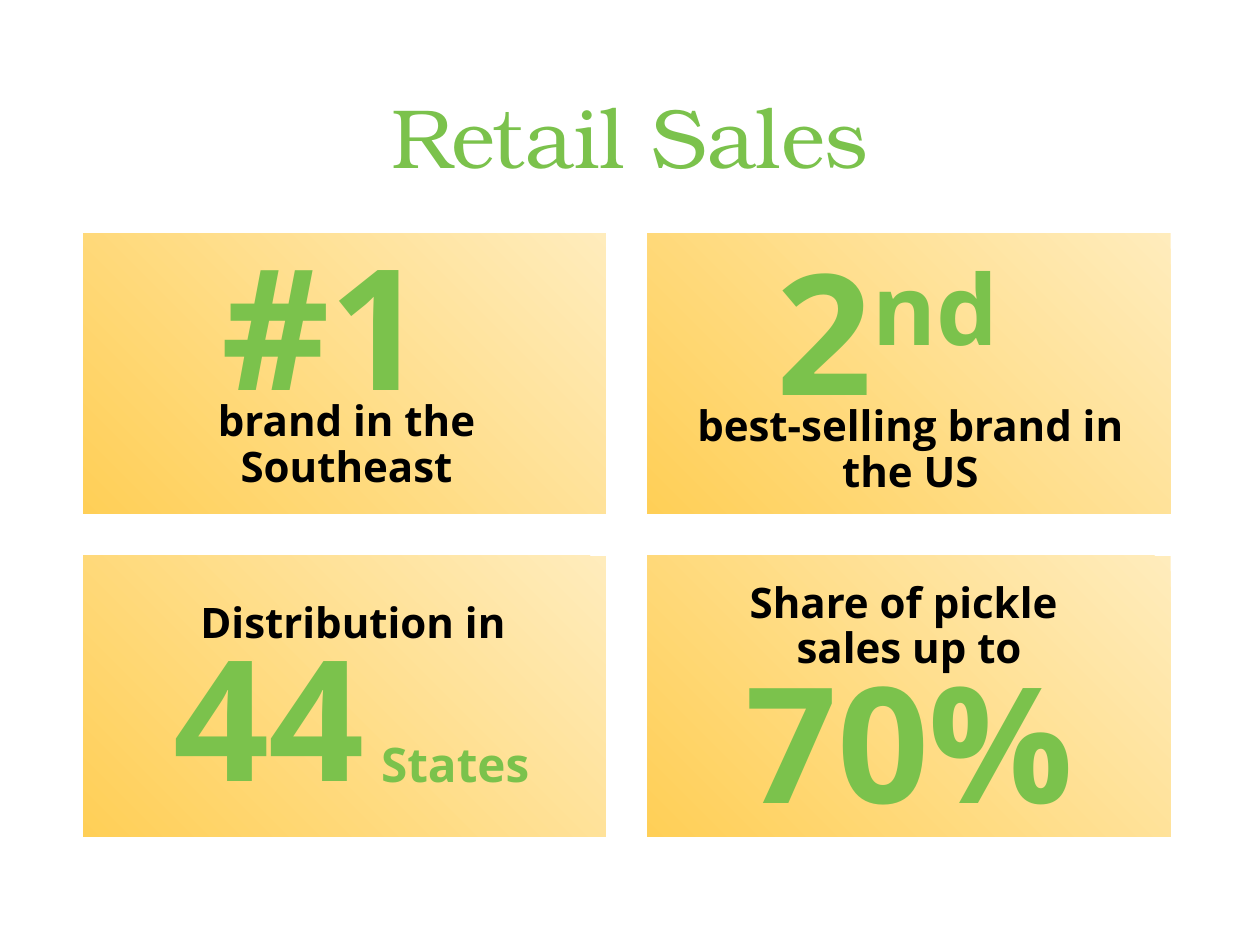
from dataclasses import dataclass

from pptx import Presentation
from pptx.dml.color import RGBColor
from pptx.enum.shapes import MSO_SHAPE
from pptx.enum.text import MSO_ANCHOR, PP_ALIGN
from pptx.util import Inches, Pt

GREEN = RGBColor(0x7B, 0xC2, 0x4C)
BLACK = RGBColor(0x00, 0x00, 0x00)
PALE_YELLOW = RGBColor(0xFF, 0xEC, 0xBC)
DEEP_YELLOW = RGBColor(0xFF, 0xCF, 0x57)
TITLE_FONT = "TeX Gyre Bonum"
BODY_FONT = "Open Sans"

# Card grid
CARD_LEFT, CARD_TOP = 0.66, 1.85
CARD_WIDTH, CARD_HEIGHT = 4.15, 2.23
COLUMN_STEP, ROW_STEP = 4.48, 2.56


@dataclass
class Label:
    text: str
    left: float
    top: float
    width: float
    height: float
    size: float = 24
    color: RGBColor = BLACK
    align: PP_ALIGN = PP_ALIGN.CENTER
    spacing: float = 0.9
    superscript: str = ""


LABELS = [
    # First in the Southeast
    Label("#1", 0.66, 1.9, 3.82, 1.32, 96, GREEN),
    Label("brand in the\nSoutheast", 0.69, 3.13, 4.12, 0.95),
    # Second in the country
    Label("2", 5.69, 1.94, 2.91, 1.27, 96, GREEN, superscript="nd "),
    Label("best-selling brand in the US", 5.16, 3.17, 4.13, 0.9),
    # Distribution
    Label("Distribution in", 1.36, 4.73, 2.75, 0.61, align=PP_ALIGN.RIGHT),
    Label("44", 1.17, 5, 1.93, 1.28, 96, GREEN),
    Label("States", 2.56, 5.91, 1.74, 0.42, 27.2, GREEN, PP_ALIGN.RIGHT, 0.7),
    # Share of sales
    Label("Share of pickle \nsales up to", 5.14, 4.57, 4.15, 1.13),
    Label("70%", 5.16, 5.22, 4.12, 1.08, 92, GREEN),
]


def write(p, text: str, *, font: str, size: float, color: RGBColor,
          bold: bool = False, superscript: bool = False) -> None:
    """Add text to a paragraph, with a line break at each newline."""
    for i, line in enumerate(text.split("\n")):
        if i:
            p.add_line_break()
        r = p.add_run()
        r.text = line
        r.font.name = font
        r.font.size = Pt(size)
        r.font.bold = bold
        r.font.color.rgb = color
        if superscript:
            r._r.get_or_add_rPr().set("baseline", "30000")


def add_card(s, column: int, row: int) -> None:
    card = s.shapes.add_shape(
        MSO_SHAPE.RECTANGLE,
        Inches(CARD_LEFT + column * COLUMN_STEP),
        Inches(CARD_TOP + row * ROW_STEP),
        Inches(CARD_WIDTH), Inches(CARD_HEIGHT))
    card.shadow.inherit = False
    card.line.fill.background()
    card.fill.gradient()
    card.fill.gradient_angle = 225
    for stop, color in zip(card.fill.gradient_stops, (PALE_YELLOW, DEEP_YELLOW)):
        stop.color.rgb = color


def add_label(s, label: Label) -> None:
    sp = s.shapes.add_textbox(Inches(label.left), Inches(label.top),
                              Inches(label.width), Inches(label.height))
    tf = sp.text_frame
    tf.word_wrap = True
    p = tf.paragraphs[0]
    p.alignment = label.align
    p.line_spacing = label.spacing
    style = dict(font=BODY_FONT, size=label.size, color=label.color, bold=True)
    write(p, label.text, **style)
    if label.superscript:
        write(p, label.superscript, superscript=True, **style)


def add_title(s, text: str) -> None:
    sp = s.shapes.title
    sp.left, sp.top = Inches(0.69), Inches(0.4)
    sp.width, sp.height = Inches(8.62), Inches(1.45)
    tf = sp.text_frame
    tf.vertical_anchor = MSO_ANCHOR.MIDDLE
    p = tf.paragraphs[0]
    p.alignment = PP_ALIGN.CENTER
    p.line_spacing = 0.9
    write(p, text, font=TITLE_FONT, size=48, color=GREEN)


def main() -> None:
    prs = Presentation()
    prs.slide_width, prs.slide_height = Inches(10), Inches(7.5)
    s = prs.slides.add_slide(prs.slide_layouts[5])
    add_title(s, "Retail Sales")
    for row in range(2):
        for column in range(2):
            add_card(s, column, row)
    for label in LABELS:
        add_label(s, label)
    prs.save("out.pptx")


if __name__ == "__main__":
    main()
